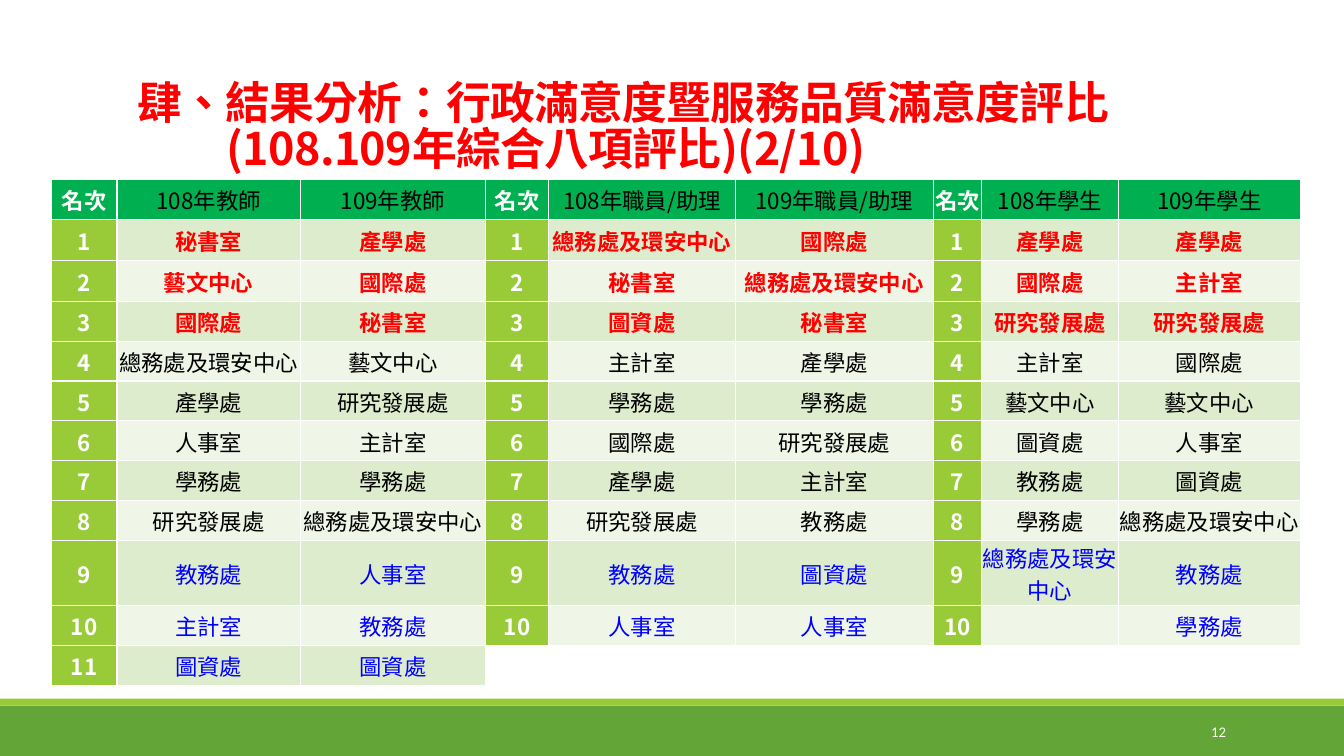
"""Build the slide that ranks offices by satisfaction in 108 and 109."""
from lxml import etree
from pptx import Presentation
from pptx import util as u
from pptx.dml.color import RGBColor
from pptx.enum import lang, shapes, text
from pptx.oxml.ns import qn

RED = RGBColor(0xFF, 0x00, 0x00)
BLUE = RGBColor(0x00, 0x00, 0xFF)
BLACK = RGBColor(0x00, 0x00, 0x00)
WHITE = RGBColor(0xFF, 0xFF, 0xFF)
GRAY = RGBColor(0x80, 0x80, 0x80)
HEADER_GREEN = RGBColor(0x00, 0xB0, 0x50)
RANK_GREEN = RGBColor(0x99, 0xCB, 0x38)
FOOTER_GREEN = RGBColor(0x63, 0xA5, 0x37)
BANDS = (RGBColor(0xEF, 0xF6, 0xE8), RGBColor(0xDE, 0xEC, 0xCE))
CJK = "Noto Sans CJK SC"

GENERAL = "總務處及環安中心"
RESEARCH = "研究發展處"
RANKINGS = [
    ("名次", "108年教師", "109年教師", "名次", "108年職員/助理", "109年職員/助理",
     "名次", "108年學生", "109年學生"),
    ("1", "秘書室", "產學處", "1", GENERAL, "國際處", "1", "產學處", "產學處"),
    ("2", "藝文中心", "國際處", "2", "秘書室", GENERAL, "2", "國際處", "主計室"),
    ("3", "國際處", "秘書室", "3", "圖資處", "秘書室", "3", RESEARCH, RESEARCH),
    ("4", GENERAL, "藝文中心", "4", "主計室", "產學處", "4", "主計室", "國際處"),
    ("5", "產學處", RESEARCH, "5", "學務處", "學務處", "5", "藝文中心", "藝文中心"),
    ("6", "人事室", "主計室", "6", "國際處", RESEARCH, "6", "圖資處", "人事室"),
    ("7", "學務處", "學務處", "7", "產學處", "主計室", "7", "教務處", "圖資處"),
    ("8", RESEARCH, GENERAL, "8", RESEARCH, "教務處", "8", "學務處", GENERAL),
    ("9", "教務處", "人事室", "9", "教務處", "圖資處", "9", GENERAL, "教務處"),
    ("10", "主計室", "教務處", "10", "人事室", "人事室", "10", "", "學務處"),
    ("11", "圖資處", "圖資處", "", "", "", "", "", ""),
]
COLUMN_WIDTHS = (46.8, 131, 132.3, 45.2, 133.2, 141.6, 34.3, 97.9, 129.8)
ROW_HEIGHTS = (28.6, 29.2, 29.2) + (28.5,) * 6 + (46.3, 28.5, 28.5)


def write(frame, words, size=16, color=BLACK, bold=False, font=CJK,
          align=text.PP_ALIGN.CENTER):
    """Write one formatted paragraph and return it."""
    paragraph = frame.paragraphs[0]
    paragraph.alignment = align
    run = paragraph.add_run()
    run.text = words
    run.font.size = u.Pt(size)
    run.font.bold = bold
    run.font.name = font
    run.font.color.rgb = color
    run.font.language_id = lang.MSO_LANGUAGE_ID.TRADITIONAL_CHINESE
    etree.SubElement(run.font._element, qn("a:ea"), typeface=font)
    return paragraph


class RankingSlide:
    """Hold the slide and draw each kind of element on it."""

    def __init__(self, deck):
        self.slide = deck.slides.add_slide(deck.slide_layouts[5])

    def title(self, words, left, top, width, height, hanging):
        heading = self.slide.shapes.title
        heading.left, heading.top = u.Pt(left), u.Pt(top)
        heading.width, heading.height = u.Pt(width), u.Pt(height)
        frame = heading.text_frame
        frame.word_wrap = True
        frame.auto_size = text.MSO_AUTO_SIZE.NONE
        frame.vertical_anchor = text.MSO_ANCHOR.BOTTOM
        paragraph = write(frame, words, size=32, color=RED, bold=True,
                          align=text.PP_ALIGN.LEFT)
        paragraph.line_spacing = 0.85
        paragraph.runs[0].font._element.set("spc", "-50")
        indents = paragraph._p.get_or_add_pPr()
        indents.set("marL", str(u.Pt(hanging)))
        indents.set("indent", str(-u.Pt(hanging)))

    def band(self, left, top, width, height, color):
        bar = self.slide.shapes.add_shape(
            shapes.MSO_SHAPE.RECTANGLE, u.Pt(left), u.Pt(top), u.Pt(width), u.Pt(height))
        bar.shadow.inherit = False
        bar.fill.solid()
        bar.fill.fore_color.rgb = color
        bar.line.fill.background()

    def rule(self, left, right, y):
        divider = self.slide.shapes.add_connector(
            shapes.MSO_CONNECTOR.STRAIGHT, u.Pt(left), u.Pt(y), u.Pt(right), u.Pt(y))
        divider.line.color.rgb = GRAY
        divider.line.width = u.Pt(0.5)
        etree.SubElement(divider._element.spPr, qn("a:effectLst"))

    def page_number(self, words, left, top, width, height):
        label = self.slide.shapes.add_textbox(
            u.Pt(left), u.Pt(top), u.Pt(width), u.Pt(height))
        label.text_frame.word_wrap = True
        label.text_frame.vertical_anchor = text.MSO_ANCHOR.MIDDLE
        write(label.text_frame, words, size=10.5, color=WHITE, font="Calibri",
              align=text.PP_ALIGN.RIGHT)

    def borders(self, cell, above, below):
        properties = cell._tc.get_or_add_tcPr()
        sides = (("a:lnL", 1), ("a:lnR", 1), ("a:lnT", above), ("a:lnB", below))
        for place, (side, width) in enumerate(sides):
            edge = etree.Element(qn(side), w=str(u.Pt(width)))
            fill = etree.SubElement(edge, qn("a:solidFill"))
            etree.SubElement(fill, qn("a:srgbClr"), val=str(WHITE))
            properties.insert(place, edge)

    def cell(self, cell, words, rank, column):
        is_rank = column % 3 == 0
        cell.margin_left = cell.margin_right = cell.margin_top = u.Pt(0.72)
        cell.margin_bottom = 0
        cell.vertical_anchor = text.MSO_ANCHOR.MIDDLE
        if rank == 11 and not words:
            cell.fill.background()
        else:
            cell.fill.solid()
            cell.fill.fore_color.rgb = (
                HEADER_GREEN if rank == 0 else RANK_GREEN if is_rank else BANDS[rank % 2])
        self.borders(cell, 1.5 if rank == 1 else 1, 1.5 if rank == 0 else 1)
        if words:
            color = (WHITE if is_rank else RED if 1 <= rank <= 3
                     else BLUE if rank >= 9 else BLACK)
            write(cell.text_frame, words, color=color, bold=color in (WHITE, RED))

    def table(self, rows, left, top):
        rankings = self.slide.shapes.add_table(
            len(rows), len(COLUMN_WIDTHS), u.Pt(left), u.Pt(top),
            u.Pt(sum(COLUMN_WIDTHS)), u.Pt(sum(ROW_HEIGHTS))).table
        rankings.horz_banding = False
        for column, width in zip(rankings.columns, COLUMN_WIDTHS):
            column.width = u.Pt(width)
        for row, height in zip(rankings.rows, ROW_HEIGHTS):
            row.height = u.Pt(height)
        for rank, entries in enumerate(rows):
            for column, words in enumerate(entries):
                self.cell(rankings.cell(rank, column), words, rank, column)


def main():
    deck = Presentation()
    deck.slide_width, deck.slide_height = u.Pt(960), u.Pt(540)
    page = RankingSlide(deck)
    page.band(0, 504, 960, 36, FOOTER_GREEN)
    page.band(0, 499, 960, 5, RANK_GREEN)
    page.rule(94.3, 879, 136.8)
    page.page_number("12", 779.8, 508.3, 103, 28.8)
    page.title("肆、結果分析：行政滿意度暨服務品質滿意度評比(108.109年綜合八項評比)(2/10)",
               90.7, 23.8, 815.8, 104.4, hanging=64)
    page.table(RANKINGS, 36.7, 128.2)
    deck.save("out.pptx")


if __name__ == "__main__":
    main()
